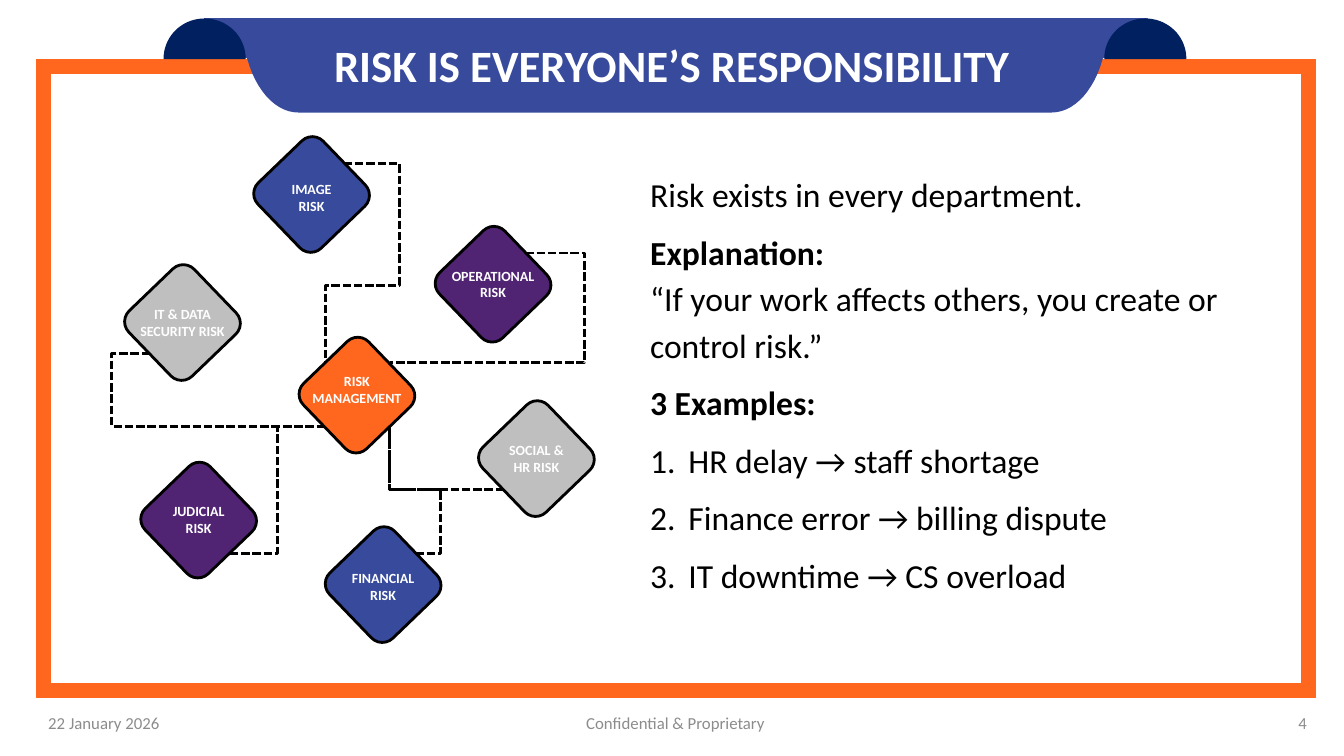
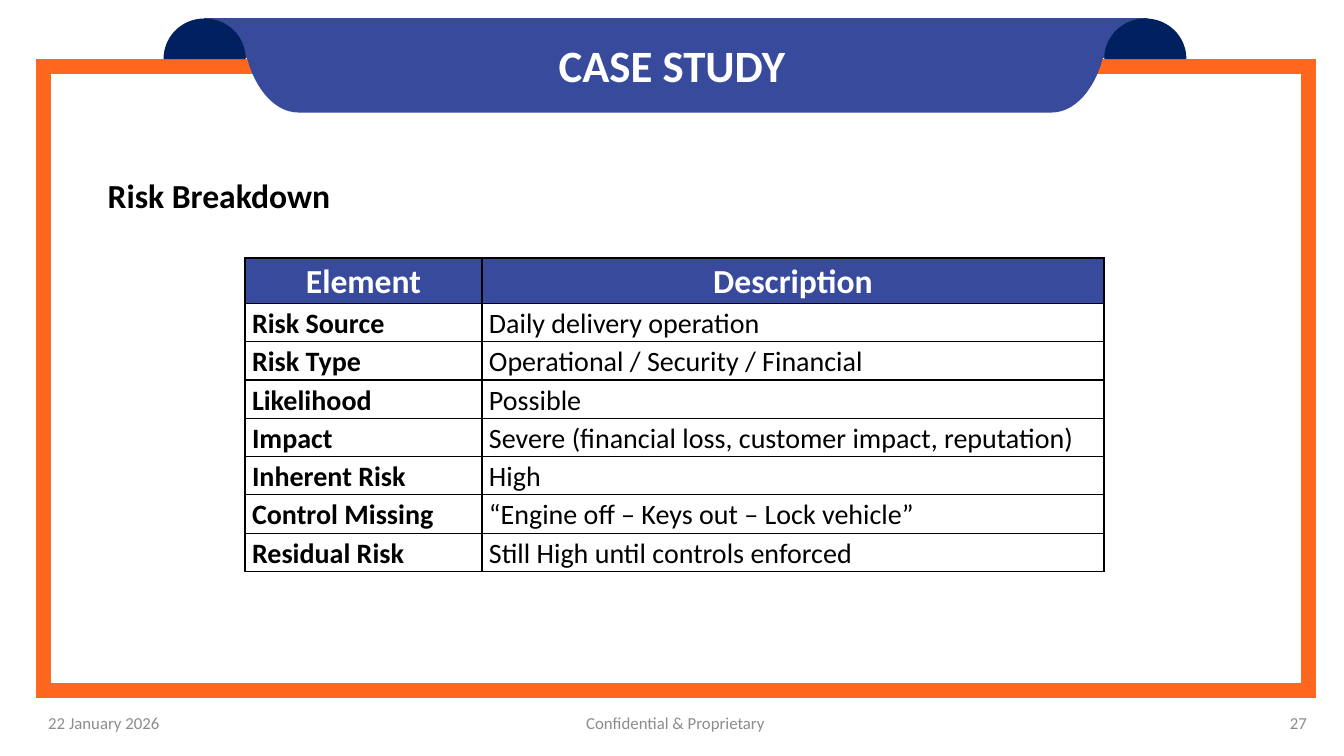
from dataclasses import dataclass
from math import cos, radians, sin

from lxml import etree
from pptx import Presentation
from pptx.dml.color import RGBColor
from pptx.enum.dml import MSO_LINE
from pptx.enum.shapes import MSO_CONNECTOR, MSO_SHAPE
from pptx.enum.text import MSO_ANCHOR, MSO_AUTO_SIZE, PP_ALIGN
from pptx.oxml.ns import qn
from pptx.util import Inches, Pt

LEFT, CENTER, RIGHT = PP_ALIGN.LEFT, PP_ALIGN.CENTER, PP_ALIGN.RIGHT
TOP, MIDDLE = MSO_ANCHOR.TOP, MSO_ANCHOR.MIDDLE
TITLE_ONLY = 5

FONT = "Calibri"
BLUE, NAVY, ORANGE, PURPLE = "374A9C", "002060", "FF671F", "512373"
SILVER, GREY, BLACK, WHITE = "BFBFBF", "8C8C8C", "000000", "FFFFFF"

DIAMOND = 0.9
HUB_TOP, HUB_BOTTOM = 3.6, 4.23


@dataclass
class Node:
    label: str
    x: float
    y: float
    color: str
    label_dy: float = 0.0


@dataclass
class Link:
    """Elbow line that leaves start horizontally; turns are its x, then y, bends."""
    start: tuple[float, float]
    end: tuple[float, float]
    turns: tuple[float, ...] = ()


@dataclass
class Para:
    text: str
    heading: str = ""
    numbered: bool = False


NODES = [
    Node("RISK\nMANAGEMENT", 3.54, 3.92, ORANGE, -0.05),
    Node("OPERATIONAL\nRISK", 4.89, 2.82, PURPLE),
    Node("SOCIAL &\nHR RISK", 5.32, 4.55, SILVER),
    Node("FINANCIAL\nRISK", 3.8, 5.8, BLUE, 0.02),
    Node("JUDICIAL\nRISK", 1.97, 5.16, PURPLE),
    Node("IT & DATA\nSECURITY RISK", 1.81, 3.2, SILVER),
    Node("IMAGE\nRISK", 3.09, 1.93, BLUE, 0.03),
]

LINKS = [
    Link((3.41, 1.62), (3.23, HUB_TOP), (3.96, 2.83)),
    Link((1.49, 3.51), (3.22, HUB_BOTTOM), (1.11,)),
    Link((2.28, 5.49), (3.22, HUB_BOTTOM), (2.75,)),
    Link((4.12, 5.49), (3.86, HUB_BOTTOM), (4.37, 4.86)),
    Link((5.0, 4.86), (3.86, HUB_BOTTOM)),
    Link((5.21, 2.51), (3.87, HUB_TOP), (5.8,)),
]

BODY = [
    Para("Risk exists in every department."),
    Para("“If your work affects others, you create or control risk.”", "Explanation:"),
    Para("", "3 Examples:"),
    Para("HR delay → staff shortage", numbered=True),
    Para("Finance error → billing dispute", numbered=True),
    Para("IT downtime → CS overload", numbered=True),
]

CASE_ROWS = [
    ("Element", "Description"),
    ("Risk Source", "Daily delivery operation"),
    ("Risk Type", "Operational / Security / Financial"),
    ("Likelihood", "Possible"),
    ("Impact", "Severe (financial loss, customer impact, reputation)"),
    ("Inherent Risk", "High"),
    ("Control Missing", "“Engine off – Keys out – Lock vehicle”"),
    ("Residual Risk", "Still High until controls enforced"),
]


def rgb(color: str) -> RGBColor:
    return RGBColor.from_string(color)


def style(sp, fill: str, line: str, width: float = 1) -> None:
    sp.shadow.inherit = False
    sp.fill.solid()
    sp.fill.fore_color.rgb = rgb(fill)
    sp.line.color.rgb = rgb(line)
    sp.line.width = Pt(width)


def add_run(p, text: str, size: float, color: str, bold: bool = False) -> None:
    r = p.add_run()
    r.text = text
    r.font.color.rgb = rgb(color)
    for name, value in {"name": FONT, "size": Pt(size), "bold": bold}.items():
        setattr(r.font, name, value)


def add_text(s, box, text: str, size: float, color: str, bold: bool = False,
             align=LEFT, anchor=TOP, wrap: bool = True):
    tf = s.shapes.add_textbox(*map(Inches, box)).text_frame
    tf.word_wrap = wrap
    tf.vertical_anchor = anchor
    for i, line in enumerate(text.split("\n")):
        p = tf.add_paragraph() if i else tf.paragraphs[0]
        p.alignment = align
        add_run(p, line, size, color, bold)


def arc(cx: float, cy: float, rx: float, ry: float, start: int, end: int):
    """Points on an ellipse, in degrees clockwise from the right."""
    angles = [radians(a) for a in range(start, end + 1, 5)]
    return [(Inches(cx + rx * cos(a)), Inches(cy + ry * sin(a))) for a in angles]


def add_outline(s, points, color: str):
    builder = s.shapes.build_freeform(*points[0])
    builder.add_line_segments(points[1:], close=True)
    sp = builder.convert_to_shape()
    style(sp, color, color)
    return sp


def decorate_layout(layout, s) -> None:
    """Draw frame and ribbon with the slide's shape tools, then move them to the layout."""
    frame = s.shapes.add_shape(MSO_SHAPE.FRAME, *map(Inches, (0.36, 0.59, 12.69, 6.33)))
    frame.adjustments[0] = 0.022
    style(frame, ORANGE, ORANGE)
    band = s.shapes.add_shape(MSO_SHAPE.RECTANGLE, *map(Inches, (2.03, 0.19, 9.35, 0.38)))
    style(band, BLUE, BLUE)
    flap = arc(10.43, 0.21, 0.55, 0.9, 0, 90) + arc(2.96, 0.21, 0.55, 0.9, 90, 180)
    parts = [frame, band, add_outline(s, flap, BLUE)]
    parts += [add_outline(s, arc(cx, 0.58, 0.4, 0.39, 180, 360), NAVY)
              for cx in (2.03, 11.36)]
    for shape_id, sp in enumerate(parts, start=100):
        sp.element.nvSpPr.cNvPr.set("id", str(shape_id))
        layout.shapes.element.append(sp.element)


def fill_title_and_footer(s, title: str, number: int) -> None:
    sp = s.shapes.title
    box = {"left": 2.41, "top": 0.32, "width": 8.51, "height": 0.64}
    for name, value in box.items():
        setattr(sp, name, Inches(value))
    tf = sp.text_frame
    for name, value in {"auto_size": MSO_AUTO_SIZE.NONE, "word_wrap": True,
                        "vertical_anchor": MIDDLE}.items():
        setattr(tf, name, value)
    tf.paragraphs[0].alignment = CENTER
    add_run(tf.paragraphs[0], title, 32, WHITE, True)
    for x, w, text, align in ((0.38, 2.28, "22 January 2026", LEFT),
                              (4.45, 4.5, "Confidential & Proprietary", CENTER),
                              (10.78, 2.28, str(number), RIGHT)):
        add_text(s, (x, 6.97, w, 0.4), text, 12, GREY, align=align, anchor=MIDDLE)


def add_node(s, node: Node) -> None:
    half = DIAMOND / 2
    sp = s.shapes.add_shape(MSO_SHAPE.FLOWCHART_ALTERNATE_PROCESS, Inches(node.x - half),
                            Inches(node.y - half), Inches(DIAMOND), Inches(DIAMOND))
    sp.rotation = 46.1
    style(sp, node.color, BLACK, 2)
    add_text(s, (node.x - 0.55, node.y + node.label_dy - 0.22, 1.1, 0.44), node.label,
             10, WHITE, True, CENTER, wrap=False)


def add_link(s, link: Link) -> None:
    cxn = s.shapes.add_connector(MSO_CONNECTOR.ELBOW, *map(Inches, link.start + link.end))
    cxn.line.color.rgb = rgb(BLACK)
    cxn.line.width = Pt(2)
    cxn.line.dash_style = MSO_LINE.SQUARE_DOT
    sp_pr = cxn.element.spPr
    etree.SubElement(sp_pr, qn("a:effectLst"))
    geom = sp_pr.find(qn("a:prstGeom"))
    geom.set("prst", f"bentConnector{2 + len(link.turns)}")
    guides = geom.find(qn("a:avLst"))
    if guides is None:
        guides = etree.SubElement(geom, qn("a:avLst"))
    for i, (turn, a, b) in enumerate(zip(link.turns, link.start, link.end), start=1):
        value = round((turn - a) / (b - a) * 100000)
        etree.SubElement(guides, qn("a:gd"), name=f"adj{i}", fmla=f"val {value}")


def add_body(s) -> None:
    tf = s.shapes.add_textbox(*map(Inches, (6.35, 1.62, 5.93, 4.35))).text_frame
    tf.word_wrap = True
    for i, para in enumerate(BODY):
        p = tf.add_paragraph() if i else tf.paragraphs[0]
        if para.numbered:
            p_pr = p._p.get_or_add_pPr()
            p_pr.set("marL", str(Inches(0.38)))
            p_pr.set("indent", str(-Inches(0.38)))
            etree.SubElement(p_pr, qn("a:buFont"), typeface="+mj-lt")
            etree.SubElement(p_pr, qn("a:buAutoNum"), type="arabicPeriod")
        p.line_spacing = 1.15
        p.space_after = Pt(8)
        if para.heading:
            add_run(p, para.heading, 24, BLACK, True)
        if para.heading and para.text:
            p.add_line_break()
        if para.text:
            add_run(p, para.text, 24, BLACK)


def add_borders(cell) -> None:
    tc_pr = cell._tc.get_or_add_tcPr()
    for i, side in enumerate(("lnL", "lnR", "lnT", "lnB")):
        ln = etree.Element(qn(f"a:{side}"), w=str(Pt(1)))
        fill = etree.SubElement(ln, qn("a:solidFill"))
        etree.SubElement(fill, qn("a:srgbClr"), val=BLACK)
        tc_pr.insert(i, ln)


def add_case_table(s) -> None:
    table = s.shapes.add_table(len(CASE_ROWS), 2,
                               *map(Inches, (2.43, 2.56, 8.52, 3.11))).table
    table.first_row = table.horz_banding = False
    for column, width in zip(table.columns, (2.35, 6.17)):
        column.width = Inches(width)
    for i, row in enumerate(CASE_ROWS):
        header = i == 0
        table.rows[i].height = Inches(0.45 if header else 0.38)
        for j, text in enumerate(row):
            cell = table.cell(i, j)
            margin = Inches(0.01)
            for name, value in {"margin_left": margin if header else Inches(0.07),
                                "margin_right": margin, "margin_top": margin,
                                "margin_bottom": margin,
                                "vertical_anchor": MIDDLE}.items():
                setattr(cell, name, value)
            if header:
                cell.fill.solid()
                cell.fill.fore_color.rgb = rgb(BLUE)
            else:
                cell.fill.background()
            add_borders(cell)
            p = cell.text_frame.paragraphs[0]
            p.alignment = CENTER if header else LEFT
            p.line_spacing = 1.07
            p.space_after = Pt(8)
            add_run(p, text, 24 if header else 20, WHITE if header else BLACK,
                    header or j == 0)


def main() -> None:
    prs = Presentation()
    prs.slide_width, prs.slide_height = Inches(13.33), Inches(7.5)
    layout = prs.slide_layouts[TITLE_ONLY]

    s = prs.slides.add_slide(layout)
    decorate_layout(layout, s)
    fill_title_and_footer(s, "RISK IS EVERYONE’S RESPONSIBILITY", 4)
    add_body(s)
    for node in NODES:
        add_node(s, node)
    for link in LINKS:
        add_link(s, link)

    s = prs.slides.add_slide(layout)
    fill_title_and_footer(s, "CASE STUDY", 27)
    add_case_table(s)
    add_text(s, (0.97, 1.69, 2.43, 0.5), "Risk Breakdown", 24, BLACK, True, wrap=False)

    prs.save("out.pptx")


if __name__ == "__main__":
    main()
